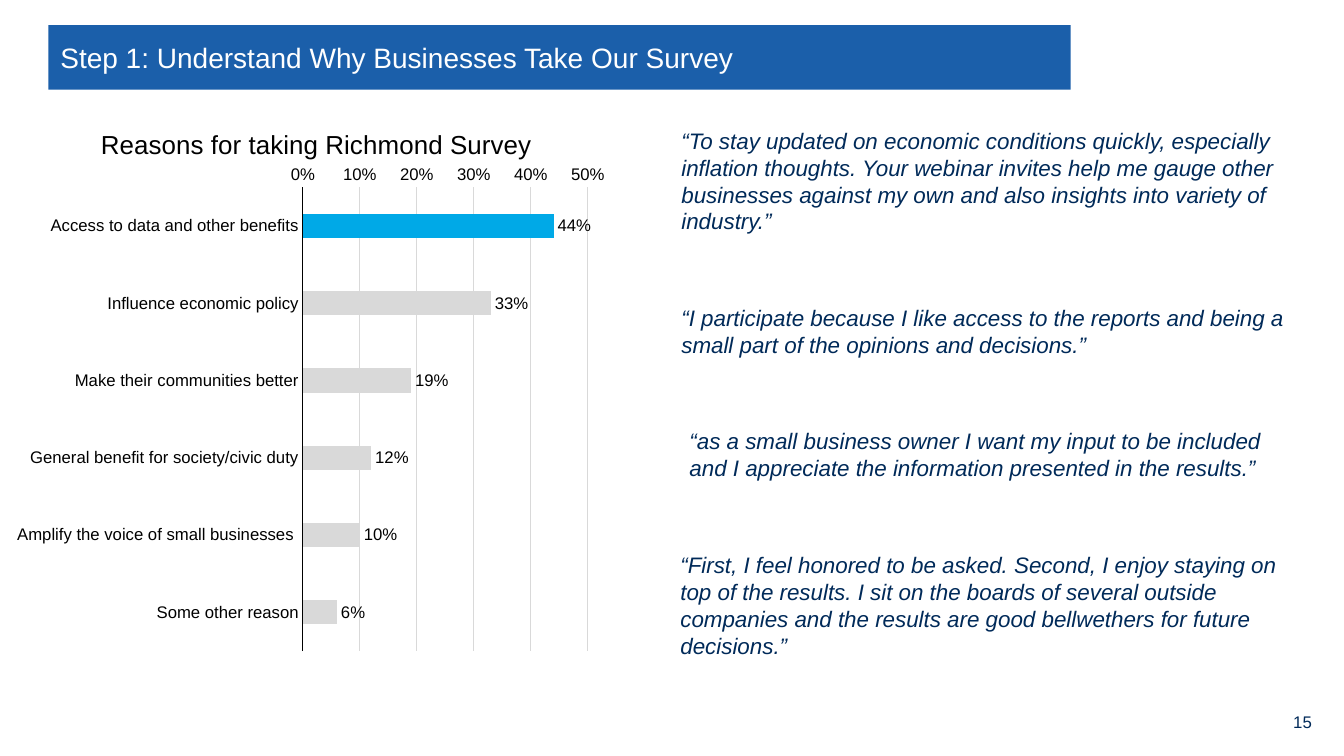
from dataclasses import dataclass

from lxml.etree import SubElement
from pptx import Presentation
from pptx.chart.data import CategoryChartData
from pptx.dml.color import RGBColor
from pptx.enum.chart import XL_CHART_TYPE, XL_LABEL_POSITION, XL_TICK_MARK
from pptx.enum.shapes import MSO_SHAPE
from pptx.enum.text import MSO_ANCHOR, MSO_AUTO_SIZE, PP_ALIGN
from pptx.oxml.ns import qn
from pptx.util import Inches, Pt


@dataclass(frozen=True)
class Theme:
    face: str = "Arial"
    banner: str = "1B5FAA"
    navy: str = "002A59"
    white: str = "FFFFFF"
    black: str = "000000"
    grey: str = "D9D9D9"
    accent: str = "00A9E7"
    title: float = 20
    heading: float = 18.6
    quote: float = 16
    label: float = 12
    base: float = 10


REASONS = [
    ("Access to data and other benefits", 0.44),
    ("Influence economic policy", 0.33),
    ("Make their communities better", 0.19),
    ("General benefit for society/civic duty", 0.12),
    ("Amplify the voice of small businesses ", 0.10),
    ("Some other reason", 0.06),
]

QUOTES = [
    ((6.66, 1.21, 6.33, 1.18),
     "“To stay updated on economic conditions quickly, especially inflation thoughts. "
     "Your webinar invites help me gauge other businesses against my own and also "
     "insights into variety of industry.”"),
    ((6.66, 2.97, 6.33, 0.64),
     "“I participate because I like access to the reports and being a small part of "
     "the opinions and decisions.”"),
    ((6.74, 4.19, 6.17, 0.64),
     "“as a small business owner I want my input to be included and I appreciate the "
     "information presented in the results.”"),
    ((6.65, 5.42, 6.46, 1.18),
     "“First, I feel honored to be asked. Second, I enjoy staying on top of the "
     "results. I sit on the boards of several outside companies and the results are "
     "good bellwethers for future decisions.”"),
]


def paint(fill, color):
    fill.solid()
    fill.fore_color.rgb = RGBColor.from_string(color)


def place(parent, index, size, spot, target=None):
    """Lay out a chart part; spot is left, top[, width, height] in inches."""
    for old in parent.findall(qn("c:layout")):
        parent.remove(old)
    layout = SubElement(parent, qn("c:layout"))
    parent.insert(index, layout)
    manual = SubElement(layout, qn("c:manualLayout"))
    marks = [("layoutTarget", target)] if target else []
    marks += [("xMode", "edge"), ("yMode", "edge")]
    marks += [(name, length / whole)
              for name, length, whole in zip("xywh", spot, size * 2)]
    for name, value in marks:
        SubElement(manual, qn(f"c:{name}")).set("val", str(value))


class Deck:
    def __init__(self, theme):
        self.theme = theme
        self.show = Presentation()
        self.show.slide_width = Inches(13.33)
        self.show.slide_height = Inches(7.5)
        self.slide = self.show.slides.add_slide(self.show.slide_layouts[6])

    def style(self, font, size, color, italic=None):
        font.name = self.theme.face
        font.size = Pt(size)
        font.color.rgb = RGBColor.from_string(color)
        font.bold = False
        font.italic = italic

    def block(self, box, color):
        shape = self.slide.shapes.add_shape(MSO_SHAPE.RECTANGLE, *map(Inches, box))
        shape.shadow.inherit = False
        paint(shape.fill, color)
        shape.line.fill.background()

    def text(self, box, words, size, color, italic=None,
             anchor=MSO_ANCHOR.MIDDLE, align=PP_ALIGN.LEFT):
        frame = self.slide.shapes.add_textbox(*map(Inches, box)).text_frame
        frame.word_wrap = True
        frame.vertical_anchor = anchor
        para = frame.paragraphs[0]
        para.alignment = align
        run = para.add_run()
        run.text = words
        self.style(run.font, size, color, italic)
        return frame

    def quote(self, box, words):
        frame = self.text(box, words, self.theme.quote, self.theme.navy,
                          italic=True, anchor=MSO_ANCHOR.TOP)
        frame.auto_size = MSO_AUTO_SIZE.SHAPE_TO_FIT_TEXT

    def bars(self, box, heading, rows):
        """Draw a bar chart, first row on top and in the accent colour."""
        theme = self.theme
        size = box[2:]
        data = CategoryChartData(number_format="0%")
        data.categories = [name for name, _ in rows]
        data.add_series("Series 1", [value for _, value in rows])
        chart = self.slide.shapes.add_chart(
            XL_CHART_TYPE.BAR_CLUSTERED, *map(Inches, box), data).chart
        self.style(chart.font, theme.base, theme.navy)
        chart.has_legend = False

        title = chart.chart_title
        run = title.text_frame.paragraphs[0].add_run()
        run.text = heading
        self.style(run.font, theme.heading, theme.black)
        title.include_in_layout = False
        plan = chart._chartSpace.chart
        place(plan.find(qn("c:title")), 1, size, (0.76, 0.16))
        place(plan.plotArea, 0, size, (2.82, 0.8, 2.84, 4.6), "inner")

        cats, vals = chart.category_axis, chart.value_axis
        for axis in (cats, vals):
            axis.major_tick_mark = axis.minor_tick_mark = XL_TICK_MARK.NONE
            self.style(axis.tick_labels.font, theme.label, theme.black)
        cats.reverse_order = True
        paint(cats.format.line.fill, theme.black)
        cats.format.line.width = Pt(0.75)
        vals.minimum_scale, vals.maximum_scale, vals.major_unit = 0, 0.5, 0.1
        vals.tick_labels.number_format = "0%"
        vals.tick_labels.number_format_is_linked = False
        vals.format.line.fill.background()
        grid = vals.major_gridlines.format.line
        paint(grid.fill, theme.grey)
        grid.width = Pt(0.75)

        plot = chart.plots[0]
        plot.gap_width = 219
        plot.vary_by_categories = False
        series = plot.series[0]
        paint(series.format.fill, theme.grey)
        paint(series.points[0].format.fill, theme.accent)
        labels = series.data_labels
        labels.show_value = True
        labels.position = XL_LABEL_POSITION.OUTSIDE_END
        labels.number_format = "0%"
        labels.number_format_is_linked = False
        self.style(labels.font, theme.label, theme.black)


def main():
    theme = Theme()
    deck = Deck(theme)
    deck.block((0.48, 0.25, 10.14, 0.64), theme.banner)
    deck.text((0.5, 0.28, 10.08, 0.58),
              "Step 1: Understand Why Businesses Take Our Survey",
              theme.title, theme.white)
    deck.text((12.44, 7, 0.67, 0.33), "15", theme.label, theme.navy,
              align=PP_ALIGN.RIGHT)
    deck.bars((0.17, 1.06, 5.92, 5.55), "Reasons for taking Richmond Survey", REASONS)
    for box, words in QUOTES:
        deck.quote(box, words)
    deck.show.save("out.pptx")


if __name__ == "__main__":
    main()
